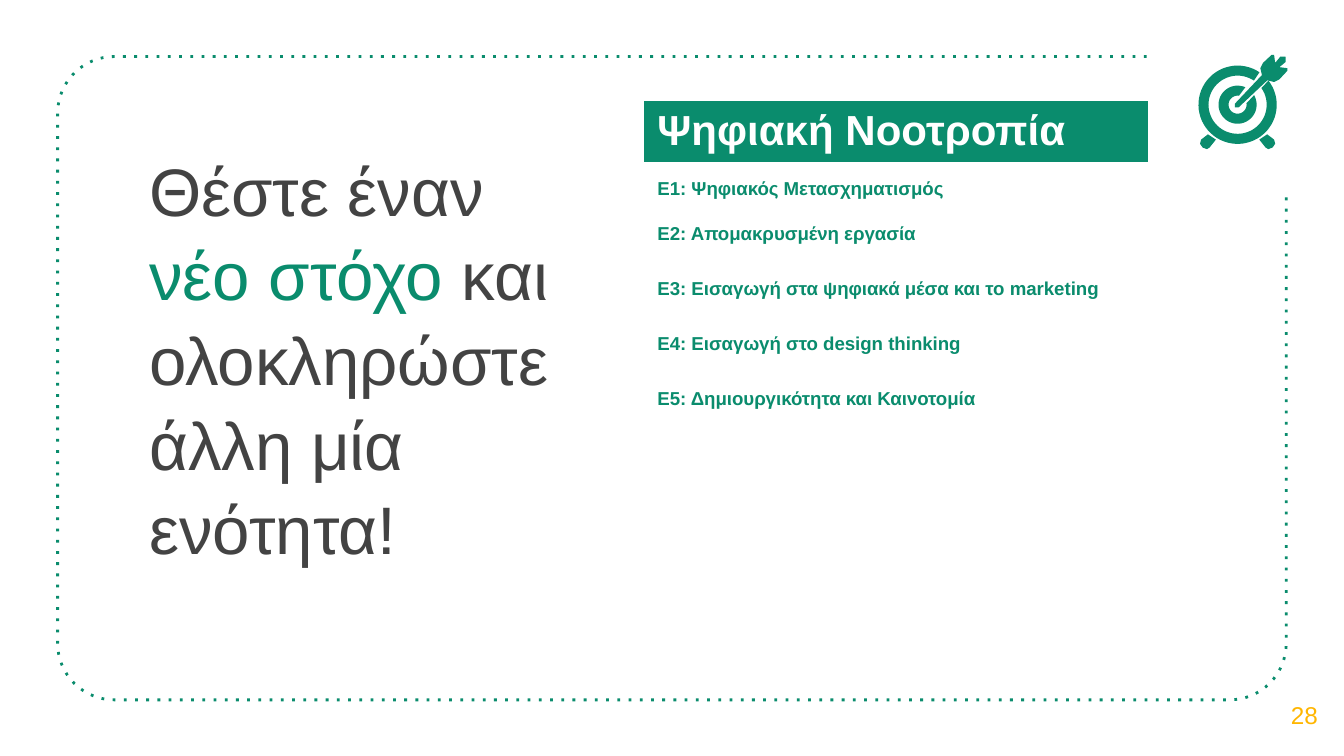
import math

from pptx import Presentation
from pptx import util as u
from pptx.dml.color import RGBColor
from pptx.enum import dml, text
from pptx.oxml.ns import qn

Cm, Pt = u.Cm, u.Pt
GREEN = RGBColor(0x0A, 0x8C, 0x6D)
GREY = RGBColor(0x43, 0x43, 0x43)
AMBER = RGBColor(0xFF, 0xB6, 0x00)
WHITE = RGBColor(0xFF, 0xFF, 0xFF)
FONT = "Arial"
PLAIN_TABLE = "{2D5ABB26-0587-4C30-8999-92F81FD0307C}"

# Content
HEADLINE = [("Θέστε έναν ", GREY), ("νέο στόχο ", GREEN),
            ("και ολοκληρώστε άλλη μία ενότητα!", GREY)]
COURSE = "Ψηφιακή Νοοτροπία"
UNITS = [
    "Ε1: Ψηφιακός Μετασχηματισμός",
    "Ε2: Απομακρυσμένη εργασία",
    "Ε3: Εισαγωγή στα ψηφιακά μέσα και το marketing",
    "Ε4: Εισαγωγή στο design thinking",
    "Ε5: Δημιουργικότητα και Καινοτομία",
]
PAGE = "28"

# Geometry in cm; the target's parts are offsets from its centre
LEFT, TOP, RIGHT, BOTTOM, CORNER = 1.09, 1.07, 24.31, 13.23, 1.07
FRAME_START, FRAME_END = (21.67, TOP), (RIGHT, 3.71)
TARGET = (23.39, 1.98)
RINGS = [  # outer radius, its gap in degrees, inner radius, its gap
    (0.74, (38, 56), 0.55, (35, 56)),
    (0.36, (30, 66), 0.17, (9, 81)),
]
FOOT = [(-0.56, 0.56), (-0.69, 0.66), (-0.71, 0.74), (-0.66, 0.81),
        (-0.58, 0.84), (-0.53, 0.81), (-0.41, 0.66)]
HALF_ARROW = [(-0.05, 0.05), (-0.05, -0.02), (0.46, -0.56), (0.43, -0.69),
              (0.48, -0.79), (0.64, -0.94), (0.69, -0.94), (0.71, -0.79),
              (0.81, -0.91), (0.9, -0.91)]


def arc(center, radius, start, end, steps):
    """Points along an arc; degrees run counter-clockwise from the right."""
    angles = [math.radians(start + (end - start) * i / steps) for i in range(steps + 1)]
    return [(center[0] + radius * math.cos(a), center[1] - radius * math.sin(a))
            for a in angles]


def outline(slide, points, close=True):
    points = [(Cm(x), Cm(y)) for x, y in points]
    builder = slide.shapes.build_freeform(*points[0])
    builder.add_line_segments(points[1:], close=close)
    shape = builder.convert_to_shape()
    shape.shadow.inherit = False
    return shape


def style(run, size, color, bold=False):
    values = {"name": FONT, "size": Pt(size), "bold": bold}
    for key, value in values.items():
        setattr(run.font, key, value)
    run.font.color.rgb = color


def place(shape, left, top, width, height, **frame_format):
    box = {"left": left, "top": top, "width": width, "height": height}
    for key, value in box.items():
        setattr(shape, key, Cm(value))
    margins = {f"margin_{side}": Cm(0.25) for side in ("left", "top", "right", "bottom")}
    values = {"word_wrap": True, "auto_size": text.MSO_AUTO_SIZE.NONE}
    for key, value in {**values, **margins, **frame_format}.items():
        setattr(shape.text_frame, key, value)


def add_frame(slide):
    points = [FRAME_START]
    corners = [(LEFT + CORNER, TOP + CORNER, 90),
               (LEFT + CORNER, BOTTOM - CORNER, 180),
               (RIGHT - CORNER, BOTTOM - CORNER, 270)]
    for x, y, start in corners:
        points += arc((x, y), CORNER, start, start + 90, 16)
    frame = outline(slide, points + [FRAME_END], close=False)
    frame.fill.background()
    frame.line.color.rgb = GREEN
    frame.line.width = Pt(1.5)
    frame.line.dash_style = dml.MSO_LINE.ROUND_DOT
    # The wider "dot" spacing has no enum member
    frame.line._ln.find(qn("a:prstDash")).set("val", "dot")


def add_target(slide):
    def shift(part):
        return [(TARGET[0] + x, TARGET[1] + y) for x, y in part]

    parts = [arc(TARGET, outer, gap[1], gap[0] + 360, 60)
             + arc(TARGET, inner, inner_gap[0] + 360, inner_gap[1], 60)
             for outer, gap, inner, inner_gap in RINGS]
    parts += [shift(FOOT), shift([(-x, y) for x, y in FOOT])]
    # The arrow is symmetric about the rising diagonal
    parts.append(shift(HALF_ARROW + [(-y, -x) for x, y in reversed(HALF_ARROW)]))
    for part in parts:
        shape = outline(slide, part)
        shape.fill.solid()
        shape.fill.fore_color.rgb = GREEN
        shape.line.fill.background()


def add_headline(slide):
    title = slide.shapes.title
    place(title, 2.57, 2.49, 8.18, 2.36, vertical_anchor=text.MSO_ANCHOR.TOP)
    paragraph = title.text_frame.paragraphs[0]
    paragraph.alignment = text.PP_ALIGN.LEFT
    paragraph.line_spacing = 1.05
    for words, color in HEADLINE:
        run = paragraph.add_run()
        run.text = words
        style(run, 36, color)


def add_units(slide):
    rows = [(COURSE, 22.5, WHITE)] + [(unit, 10, GREEN) for unit in UNITS]
    table = slide.shapes.add_table(len(rows), 1, Cm(12.17), Cm(1.91), Cm(9.53),
                                   Cm(1.04 * len(rows))).table
    table._tbl.tblPr.find(qn("a:tableStyleId")).text = PLAIN_TABLE
    table.first_row = table.horz_banding = False
    for index, (words, size, color) in enumerate(rows):
        cell = table.cell(index, 0)
        cell.text = words
        style(cell.text_frame.paragraphs[0].runs[0], size, color, bold=True)
        cell.fill.background()
    header, first_unit = table.cell(0, 0), table.cell(1, 0)
    header.fill.solid()
    header.fill.fore_color.rgb = GREEN
    first_unit.vertical_anchor = text.MSO_ANCHOR.MIDDLE


def add_page_number(slide):
    number = slide.shapes.add_textbox(0, 0, 0, 0)
    place(number, 23.9, 12.75, 1.5, 1.52, vertical_anchor=text.MSO_ANCHOR.MIDDLE)
    paragraph = number.text_frame.paragraphs[0]
    paragraph.alignment = text.PP_ALIGN.CENTER
    run = paragraph.add_run()
    run.text = PAGE
    style(run, 13, AMBER)


def main():
    deck = Presentation()
    deck.slide_width, deck.slide_height = Cm(25.4), Cm(14.29)
    slide = deck.slides.add_slide(deck.slide_layouts[5])
    for add_part in (add_frame, add_headline, add_page_number, add_target, add_units):
        add_part(slide)
    deck.save("out.pptx")


if __name__ == "__main__":
    main()
